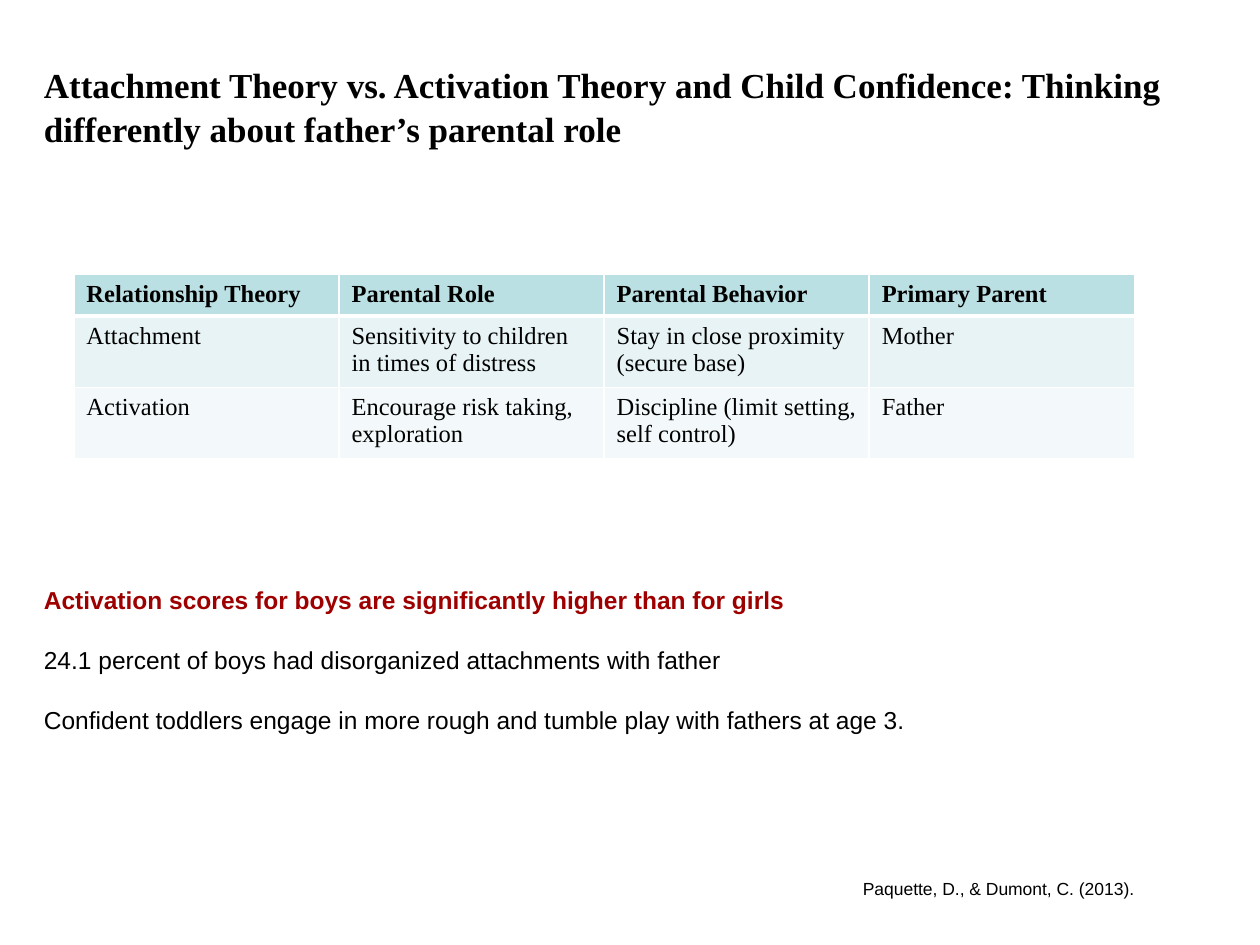
from lxml.etree import SubElement
from pptx import Presentation
from pptx.dml.color import RGBColor
from pptx.enum.text import MSO_ANCHOR
from pptx.oxml.ns import qn
from pptx.util import Pt

BLACK = RGBColor(0x00, 0x00, 0x00)
RED = RGBColor(0x9E, 0x00, 0x00)
HEADER_FILL = RGBColor(0xBB, 0xE0, 0xE3)
ROW_FILLS = [HEADER_FILL, RGBColor(0xE7, 0xF3, 0xF4), RGBColor(0xF3, 0xF9, 0xFA)]
BORDER = RGBColor(0xFF, 0xFF, 0xFF)
SERIF, SANS = "Times New Roman", "Arial"

# Content
TITLE = ("Attachment Theory vs. Activation Theory and Child Confidence: "
         "Thinking differently about father’s parental role")
THEORIES = [
    ("Relationship Theory", "Parental Role", "Parental Behavior", "Primary Parent"),
    ("Attachment", "Sensitivity to children in times of distress",
     "Stay in close proximity (secure base)", "Mother"),
    ("Activation", "Encourage risk taking, exploration",
     "Discipline (limit setting, self control)", "Father"),
]
KEY_FINDING = "Activation scores for boys are significantly higher than for girls"
FINDINGS = [
    "24.1 percent of boys had disorganized attachments with father",
    "Confident toddlers engage in more rough and tumble play with fathers at age 3.",
]
CITATION = "Paquette, D., & Dumont, C. (2013)."

# Formats
TITLE_FONT = dict(name=SERIF, size=Pt(20), bold=True)
HEADER_FONT = dict(name=SERIF, size=Pt(14), bold=True)
CELL_FONT = HEADER_FONT | dict(bold=False)
KEY_FONT = dict(name=SANS, size=Pt(14), bold=True)
FINDING_FONT = KEY_FONT | dict(bold=False)
CITATION_FONT = dict(name=SANS, size=Pt(10), bold=False)

# Layout in points
LEFT = 18
TABLE_LEFT, TABLE_TOP = 42.2, 156.5
COLUMN_WIDTH = 151.5
ROW_HEIGHTS = [23.8, 40.6, 40.6]
FINDING_GAP = 17.2


def write(paragraph, text, font, color=BLACK):
    run = paragraph.add_run()
    run.text = text
    for key, value in font.items():
        setattr(run.font, key, value)
    run.font.color.rgb = color


def add_box(slide, left, top, width, height):
    frame = slide.shapes.add_textbox(Pt(left), Pt(top), Pt(width), Pt(height)).text_frame
    frame.word_wrap = True
    return frame


def set_borders(cell, widths):
    properties = cell._tc.get_or_add_tcPr()
    for index, (side, width) in enumerate(widths.items()):
        line = properties.makeelement(qn(f"a:{side}"), {"w": str(Pt(width))})
        fill = SubElement(line, qn("a:solidFill"))
        SubElement(fill, qn("a:srgbClr"), val=str(BORDER))
        properties.insert(index, line)


def add_theory_table(slide):
    rows, columns = len(THEORIES), len(THEORIES[0])
    table = slide.shapes.add_table(
        rows, columns, Pt(TABLE_LEFT), Pt(TABLE_TOP),
        Pt(COLUMN_WIDTH * columns), Pt(sum(ROW_HEIGHTS))).table
    for column in table.columns:
        column.width = Pt(COLUMN_WIDTH)
    for r, (texts, height, fill) in enumerate(zip(THEORIES, ROW_HEIGHTS, ROW_FILLS)):
        table.rows[r].height = Pt(height)
        for c, text in enumerate(texts):
            cell = table.cell(r, c)
            cell.fill.solid()
            cell.fill.fore_color.rgb = fill
            write(cell.text_frame.paragraphs[0], text, CELL_FONT if r else HEADER_FONT)
            # A thicker rule divides the header from the body
            set_borders(cell, dict(lnL=1, lnR=1, lnT=3 if r == 1 else 1,
                                   lnB=1 if r else 3))


def main():
    prs = Presentation()
    prs.slide_width, prs.slide_height = Pt(720), Pt(540)
    slide = prs.slides.add_slide(prs.slide_layouts[6])

    # Title
    title = add_box(slide, LEFT, 30, 654, 60)
    title.vertical_anchor = MSO_ANCHOR.MIDDLE
    title.paragraphs[0].line_spacing = 1.07
    write(title.paragraphs[0], TITLE, TITLE_FONT)

    # Comparison of theories
    add_theory_table(slide)

    # Findings
    findings = add_box(slide, LEFT, 331, 642, 109)
    write(findings.paragraphs[0], KEY_FINDING, KEY_FONT, RED)
    for text in FINDINGS:
        paragraph = findings.add_paragraph()
        paragraph.space_before = Pt(FINDING_GAP)
        write(paragraph, text, FINDING_FONT)

    # Citation
    citation = add_box(slide, 486, 498, 225, 19.4)
    write(citation.paragraphs[0], CITATION, CITATION_FONT)

    prs.save("out.pptx")


if __name__ == "__main__":
    main()
